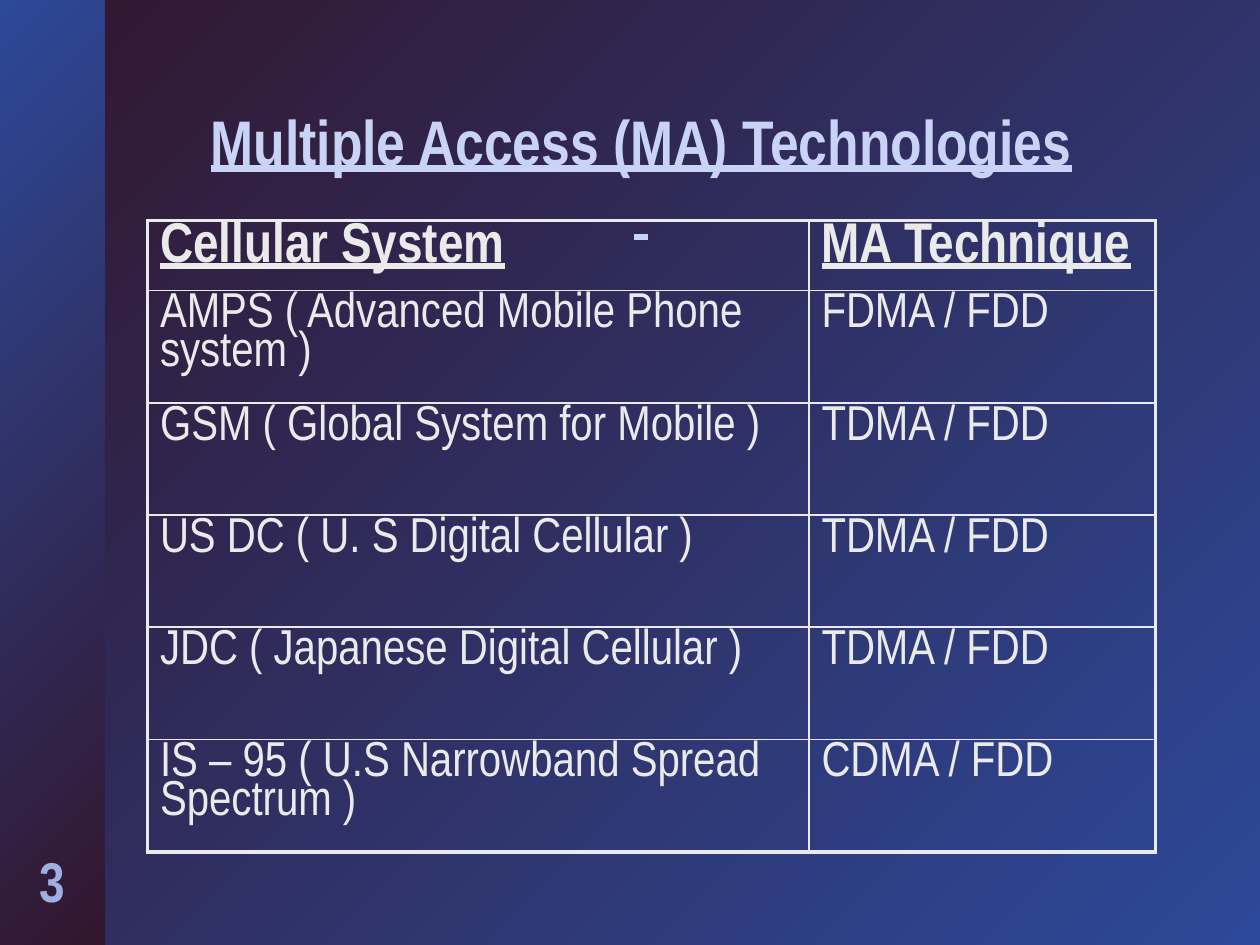
from pptx import Presentation
from pptx.util import Inches as In, Pt
from pptx.dml.color import RGBColor as RGB
from pptx.enum.shapes import MSO_SHAPE as Kind
from pptx.enum.text import PP_ALIGN as Align, MSO_ANCHOR as Anchor, MSO_AUTO_SIZE as Fit
from pptx.oxml import parse_xml
from pptx.oxml.ns import nsdecls

TITLE = "Multiple Access (MA) Technologies\v "
PAGE = "3"
ROWS = [
    ("Cellular System", "MA Technique"),
    ("AMPS ( Advanced Mobile Phone system )", "FDMA / FDD"),
    ("GSM ( Global System for Mobile )", "TDMA / FDD"),
    ("US DC ( U. S Digital Cellular )", "TDMA / FDD"),
    ("JDC ( Japanese Digital Cellular )", "TDMA / FDD"),
    ("IS – 95 ( U.S Narrowband Spread Spectrum )", "CDMA / FDD"),
]
COLS = (5.25, 2.75)
HEAD, BODY = 0.55, 0.89
THEME = dict(
    font="Arial Narrow", dark="32162D", blue="2D4999", title="C8D3F6",
    text="EAEAEA", page="9EB0E2", shade="003333",
    big=36, head=32, body=28, thick=2.25, thin=1,
)


def blend(fill, *tones):
    fill.gradient()
    fill.gradient_angle = 315
    for stop, tone in zip(fill.gradient_stops, tones):
        stop.color.rgb = RGB.from_string(THEME[tone])


def style(para, size, tone, bold=False, line=False, lead=None):
    font = para.font
    font.name, font.size = THEME["font"], Pt(THEME[size])
    font.bold, font.underline = bold, line
    font.color.rgb = RGB.from_string(THEME[tone])
    if lead:
        para.line_spacing = lead


def edge(cell, side, width):
    cell._tc.get_or_add_tcPr().append(parse_xml(
        f'<a:ln{side} {nsdecls("a")} w="{Pt(width)}"><a:solidFill>'
        f'<a:srgbClr val="{THEME["text"]}"/></a:solidFill></a:ln{side}>'))


deck = Presentation()
deck.slide_width, deck.slide_height = In(10), In(7.5)
slide = deck.slides.add_slide(deck.slide_layouts[5])
blend(slide.background.fill, "dark", "blue")

band = slide.shapes.add_shape(Kind.RECTANGLE, 0, 0, In(0.83), deck.slide_height)
band.shadow.inherit = False
band.line.fill.background()
blend(band.fill, "blue", "dark")

page = slide.shapes.add_textbox(In(0.08), In(6.67), In(0.67), In(0.63)).text_frame
page.word_wrap = True
page.text = PAGE
page.paragraphs[0].alignment = Align.CENTER
style(page.paragraphs[0], "head", "page", bold=True)

title = slide.shapes.title
title.left, title.top, title.width, title.height = In(1.13), In(0.83), In(7.92), In(0.66)
frame = title.text_frame
frame.auto_size, frame.vertical_anchor = Fit.NONE, Anchor.TOP
frame.text = TITLE
para = frame.paragraphs[0]
para.alignment = Align.CENTER
style(para, "big", "title", bold=True, line=True, lead=0.9)
for run in para.runs:
    run._r.get_or_add_rPr().append(parse_xml(
        f'<a:effectLst {nsdecls("a")}><a:outerShdw dist="38100" dir="2700000">'
        f'<a:srgbClr val="{THEME["shade"]}"/></a:outerShdw></a:effectLst>'))

last, end = len(ROWS) - 1, len(COLS) - 1
highs = [HEAD] + [BODY] * last
table = slide.shapes.add_table(
    len(ROWS), len(COLS), In(1.17), In(1.75), In(sum(COLS)), In(sum(highs))).table
table.first_row = table.horz_banding = False
for col, wide in zip(table.columns, COLS):
    col.width = In(wide)
for r, (row, high) in enumerate(zip(ROWS, highs)):
    table.rows[r].height = In(high)
    for c, text in enumerate(row):
        cell = table.cell(r, c)
        cell.text = text
        top = r == 0
        style(cell.text_frame.paragraphs[0], "head" if top else "body", "text",
              bold=top, line=top, lead=0.85)
        for side, rim in zip("LRTB", (c == 0, c == end, top, r == last)):
            edge(cell, side, THEME["thick" if rim else "thin"])
        cell.fill.background()

deck.save("out.pptx")
